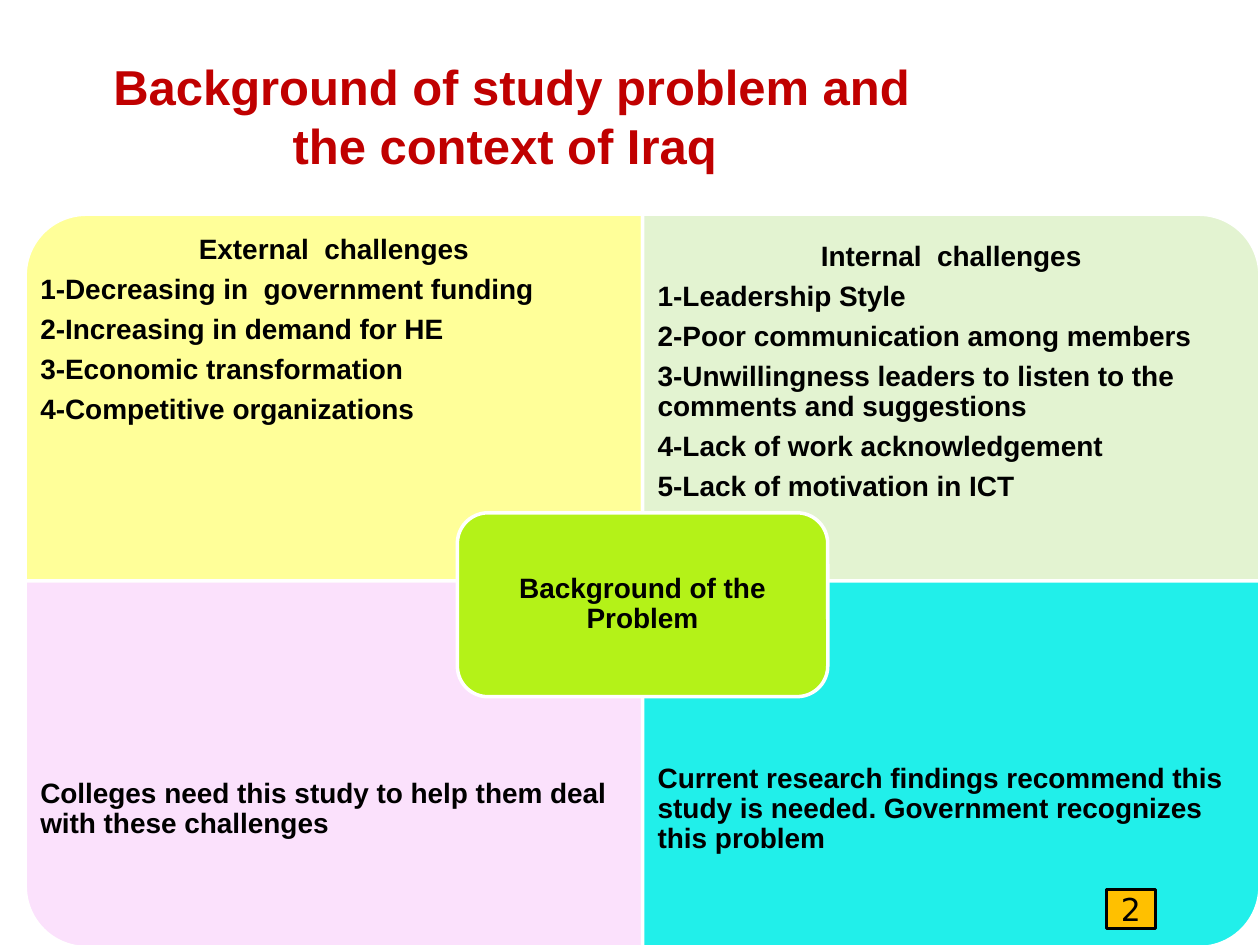
import pptx
import pptx.util
import pptx.dml.color
import pptx.enum.shapes
import pptx.enum.text

Inches = pptx.util.Inches
Pt = pptx.util.Pt
RGBColor = pptx.dml.color.RGBColor
SHAPES = pptx.enum.shapes.MSO_SHAPE
ALIGN = pptx.enum.text.PP_ALIGN
ANCHOR = pptx.enum.text.MSO_ANCHOR

BLACK = RGBColor(0x00, 0x00, 0x00)
WHITE = RGBColor(0xFF, 0xFF, 0xFF)
RED = RGBColor(0xC0, 0x00, 0x00)
YELLOW = RGBColor(0xFF, 0xFF, 0x99)
PALE_GREEN = RGBColor(0xE3, 0xF3, 0xD1)
PINK = RGBColor(0xFB, 0xE1, 0xFC)
CYAN = RGBColor(0x21, 0xEF, 0xEA)
LIME = RGBColor(0xB4, 0xF2, 0x18)
AMBER = RGBColor(0xFF, 0xC0, 0x00)

LEFT, TOP = 0.2, 1.7
PANEL_W, PANEL_H, TEXT_H = 4.9, 2.91, 2.19


def add_filled(kind, left, top, width, height, fill, line):
    shape = slide.shapes.add_shape(
        kind, Inches(left), Inches(top), Inches(width), Inches(height))
    shape.shadow.inherit = False
    shape.fill.solid()
    shape.fill.fore_color.rgb = fill
    shape.line.color.rgb = line
    shape.line.width = Pt(2)
    return shape


def write(frame, text, size, color, bold=True, font="Arial"):
    """Fill a text frame and format every run alike."""
    frame.text = text
    frame.word_wrap = True
    for paragraph in frame.paragraphs:
        for run in paragraph.runs:
            run.font.name = font
            run.font.size = Pt(size)
            run.font.bold = bold
            run.font.color.rgb = color


presentation = pptx.Presentation()
presentation.slide_width = Inches(10)
presentation.slide_height = Inches(7.5)
slide = presentation.slides.add_slide(presentation.slide_layouts[5])

title = slide.shapes.title
title.left, title.top = Inches(0.16), Inches(0.4)
title.width, title.height = Inches(7.8), Inches(1.04)
write(title.text_frame,
      "Background of study problem and\nthe context of Iraq ", 28, RED)
title.text_frame.vertical_anchor = ANCHOR.TOP
for paragraph in title.text_frame.paragraphs:
    paragraph.alignment = ALIGN.CENTER

# Column, row, rotation, fill, top inset, heading, body lines
panels = [
    (0, 0, 270, YELLOW, 0.17, "External  challenges",
     ["1-Decreasing in  government funding",
      "2-Increasing in demand for HE",
      "3-Economic transformation",
      "4-Competitive organizations"]),
    (1, 0, 0, PALE_GREEN, 0.22, "Internal  challenges",
     ["1-Leadership Style",
      "2-Poor communication among members",
      "3-Unwillingness leaders to listen to the comments and suggestions",
      "4-Lack of work acknowledgement",
      "5-Lack of motivation in ICT"]),
    (0, 1, 180, PINK, 0.12, None,
     ["Colleges need this study to help them deal with these challenges"]),
    (1, 1, 90, CYAN, 0.12, None,
     ["Current research findings recommend this study is needed. "
      "Government recognizes this problem"]),
]

for column, row, rotation, fill, top_inset, heading, lines in panels:
    left = LEFT + column * PANEL_W
    top = TOP + row * PANEL_H
    # A quarter turn swaps width and height about the panel's centre
    width, height = (PANEL_H, PANEL_W) if rotation % 180 else (PANEL_W, PANEL_H)
    panel = add_filled(SHAPES.ROUND_1_RECTANGLE,
                       left + (PANEL_W - width) / 2, top + (PANEL_H - height) / 2,
                       width, height, fill, WHITE)
    panel.rotation = rotation

    text_top = top + row * (PANEL_H - TEXT_H)
    label = slide.shapes.add_textbox(
        Inches(left), Inches(text_top), Inches(PANEL_W), Inches(TEXT_H))
    frame = label.text_frame
    write(frame, "\n".join([heading] * bool(heading) + lines), 16, BLACK)
    frame.margin_left = frame.margin_right = frame.margin_bottom = Inches(0.12)
    frame.margin_top = Inches(top_inset)
    frame.vertical_anchor = ANCHOR.TOP if heading else ANCHOR.MIDDLE
    for paragraph in frame.paragraphs:
        paragraph.line_spacing = 0.9
        paragraph.space_after = Pt(5.6)
    if heading:
        frame.paragraphs[0].alignment = ALIGN.CENTER

center = add_filled(SHAPES.ROUNDED_RECTANGLE, 3.63, 4.07, 2.94, 1.46, LIME, WHITE)
write(center.text_frame, "Background of the Problem", 16, BLACK)
center.text_frame.vertical_anchor = ANCHOR.MIDDLE
center.text_frame.paragraphs[0].alignment = ALIGN.CENTER
center.text_frame.paragraphs[0].line_spacing = 0.9

page_number = add_filled(SHAPES.RECTANGLE, 8.78, 7.06, 0.39, 0.31, AMBER, BLACK)
frame = page_number.text_frame
write(frame, "2", 18, BLACK, bold=False, font="DejaVu Sans")
frame.margin_left = frame.margin_right = frame.margin_top = frame.margin_bottom = 0
frame.vertical_anchor = ANCHOR.MIDDLE
frame.paragraphs[0].alignment = ALIGN.CENTER

presentation.save("out.pptx")
